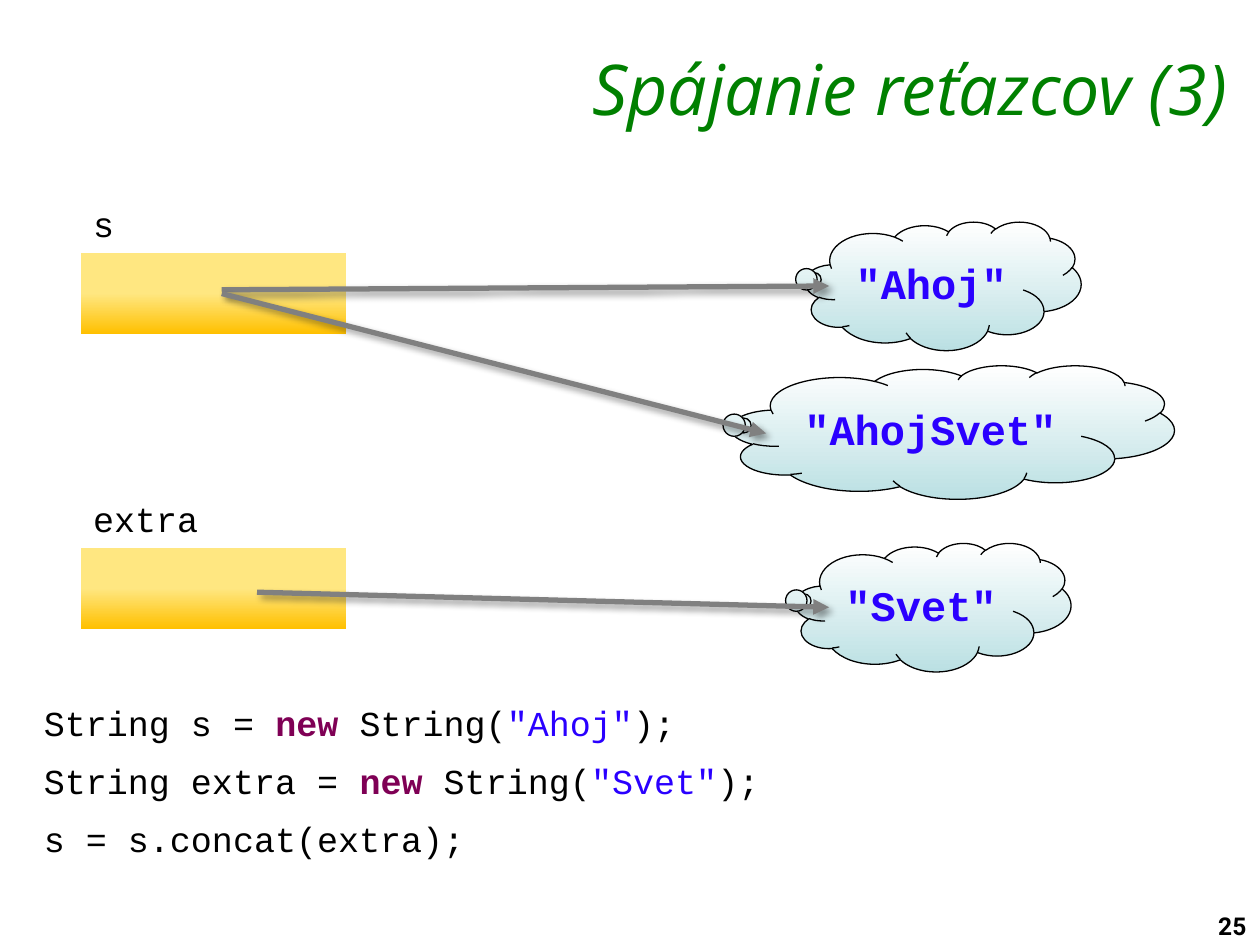
from lxml import etree
from pptx import Presentation
from pptx.dml.color import RGBColor
from pptx.enum.shapes import MSO_CONNECTOR, MSO_SHAPE
from pptx.enum.text import MSO_ANCHOR, PP_ALIGN
from pptx.oxml import parse_xml
from pptx.oxml.ns import nsdecls, qn
from pptx.util import Inches, Pt

LEFT, RIGHT = PP_ALIGN.LEFT, PP_ALIGN.RIGHT
TOP, MIDDLE = MSO_ANCHOR.TOP, MSO_ANCHOR.MIDDLE
CLOUD, RECT = MSO_SHAPE.CLOUD_CALLOUT, MSO_SHAPE.RECTANGLE
STRAIGHT = MSO_CONNECTOR.STRAIGHT

BLACK = RGBColor(0x00, 0x00, 0x00)
WHITE = RGBColor(0xFF, 0xFF, 0xFF)
GREEN = RGBColor(0x00, 0x80, 0x00)
GRAY = RGBColor(0x80, 0x80, 0x80)
BLUE = RGBColor(0x2A, 0x00, 0xFF)
PURPLE = RGBColor(0x7F, 0x00, 0x55)
TEAL = RGBColor(0xBB, 0xE0, 0xE3)
YELLOW = RGBColor(0xFF, 0xE7, 0x81)
AMBER = RGBColor(0xFF, 0xC0, 0x00)
MONO = "Courier New"

SHADOW = (
    f'<a:effectLst {nsdecls("a")}>'
    '<a:outerShdw blurRad="50800" dist="38100" dir="2700000" algn="tl">'
    '<a:srgbClr val="000000"><a:alpha val="40000"/></a:srgbClr>'
    '</a:outerShdw></a:effectLst>'
)

CODE = [
    [("String s = ", BLACK), ("new ", PURPLE), ("String(", BLACK),
     ('"Ahoj"', BLUE), (");", BLACK)],
    [("String extra = ", BLACK), ("new ", PURPLE), ("String(", BLACK),
     ('"Svet"', BLUE), (");", BLACK)],
    [("s = s.concat(extra);", BLACK)],
]


def style(par, size, color=None, name=MONO, bold=False, italic=False):
    font = par.font
    font.size, font.name = Pt(size), name
    font.bold, font.italic = bold, italic
    if color is not None:
        font.color.rgb = color


def add_box(slide, x, y, w, h):
    box = slide.shapes.add_textbox(Inches(x), Inches(y), Inches(w), Inches(h))
    box.text_frame.word_wrap = True
    return box.text_frame


def add_text(slide, text, box, size, color, align=LEFT, **look):
    par = add_box(slide, *box).paragraphs[0]
    par.text, par.alignment = text, align
    style(par, size, color, **look)


def add_shape(slide, kind, box, start, first, last):
    """Shape with a gradient running downwards from the given start."""
    shape = slide.shapes.add_shape(kind, *[Inches(v) for v in box])
    shape.shadow.inherit = False
    shape.fill.gradient()
    shape.fill.gradient_angle = 270
    stops = shape.fill.gradient_stops
    for stop, pos, color in zip(stops, (start, 1), (first, last)):
        stop.position, stop.color.rgb = pos, color
    return shape


def add_variable(slide, name, x, y):
    """Name of a variable above its memory cell."""
    add_text(slide, name, (x, y - 0.45, 2.7, 0.43), 20, BLACK)
    cell = add_shape(slide, RECT, (x, y, 2.11, 0.64), 0.5, YELLOW, AMBER)
    cell.line.fill.background()


def add_cloud(slide, text, box):
    """String object drawn as a cloud."""
    cloud = add_shape(slide, CLOUD, box, 0, WHITE, TEAL)
    cloud.adjustments[0], cloud.adjustments[1] = -0.466, -0.049
    cloud.line.color.rgb, cloud.line.width = BLACK, Pt(0.75)
    frame = cloud.text_frame
    frame.vertical_anchor = MIDDLE
    par = frame.paragraphs[0]
    par.text, par.alignment = text, LEFT
    style(par, 24, BLUE, bold=True)


def add_arrow(slide, *ends):
    """Reference from a cell to a string object."""
    arrow = slide.shapes.add_connector(STRAIGHT, *[Inches(v) for v in ends])
    arrow.line.color.rgb, arrow.line.width = GRAY, Pt(3)
    etree.SubElement(arrow.line._get_or_add_ln(), qn("a:tailEnd"),
                     type="triangle")
    arrow._element.spPr.append(parse_xml(SHADOW))


def add_code(slide, x, y, w, h):
    frame = add_box(slide, x, y, w, h)
    frame.vertical_anchor = TOP
    for i, line in enumerate(CODE):
        par = frame.add_paragraph() if i else frame.paragraphs[0]
        par.space_before = Pt(4.6 if i else 0)
        par.space_after = Pt(4.6)
        style(par, 20)
        for text, color in line:
            run = par.add_run()
            run.text, run.font.color.rgb = text, color
            if color == PURPLE:
                run.font.bold = True


def main():
    prs = Presentation()
    prs.slide_width, prs.slide_height = Inches(10), Inches(7.5)
    slide = prs.slides.add_slide(prs.slide_layouts[6])

    # Page number and title
    add_text(slide, "25", (9.57, 7.18, 0.51, 0.33), 14, BLACK,
             name="Roboto", bold=True)
    add_text(slide, "Spájanie reťazcov (3)", (2.29, 0.31, 7.55, 0.58), 40,
             GREEN, RIGHT, name="Open Sans", italic=True)

    add_code(slide, 0.25, 5.52, 6.06, 1.32)

    # Variables, the strings and the references between them
    add_cloud(slide, '"Ahoj"', (6.39, 1.76, 2.19, 1.02))
    add_variable(slide, "s", 0.64, 2.01)
    add_arrow(slide, 1.76, 2.3, 6.58, 2.27)
    add_cloud(slide, '"Svet"', (6.31, 4.31, 2.19, 1.02))
    add_variable(slide, "extra", 0.64, 4.35)
    add_arrow(slide, 2.04, 4.7, 6.58, 4.82)
    add_cloud(slide, '"AhojSvet"', (5.8, 2.9, 3.52, 1.06))
    add_arrow(slide, 1.76, 2.33, 6.08, 3.44)

    prs.save("out.pptx")


if __name__ == "__main__":
    main()
